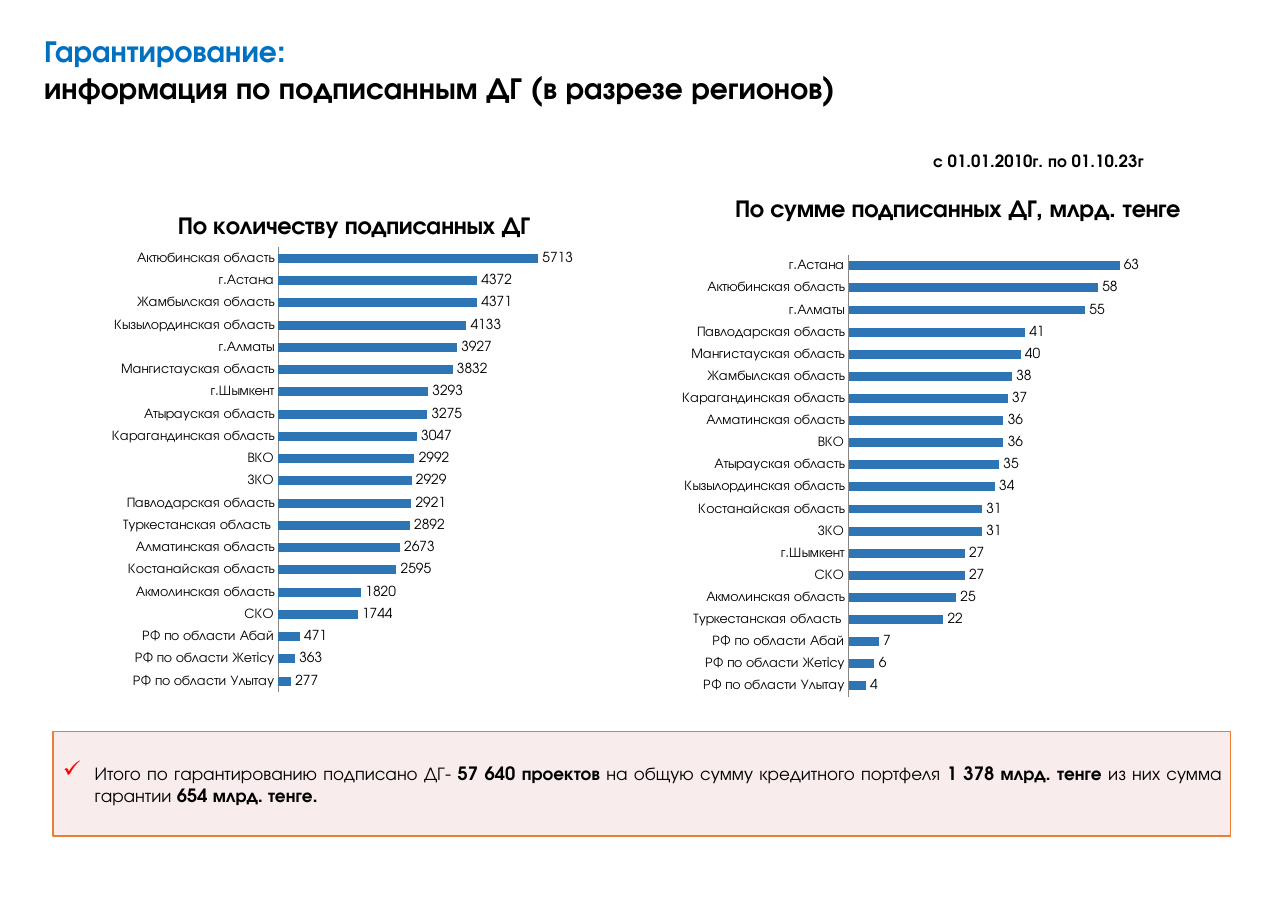
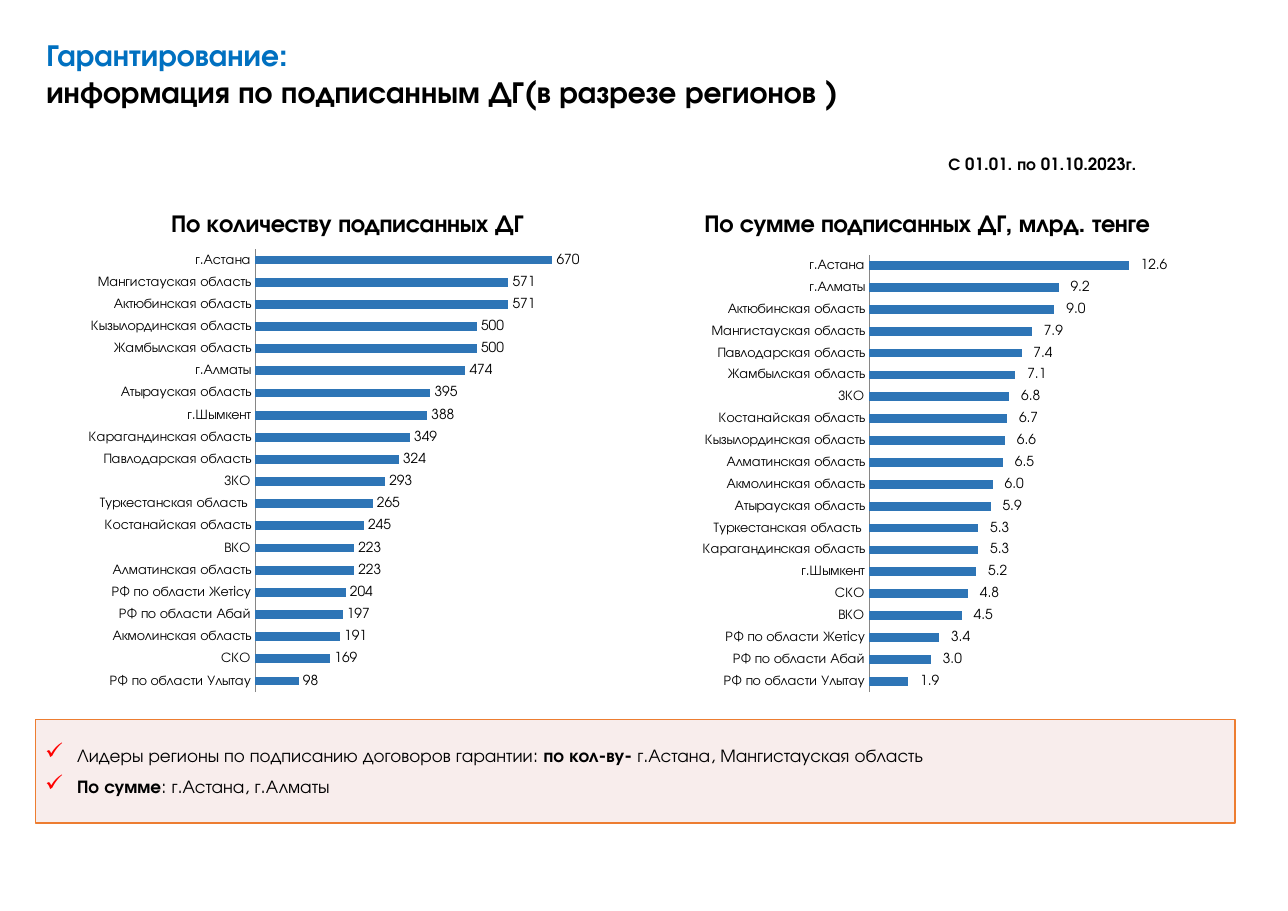
from lxml import etree
from pptx import Presentation
from pptx.chart.data import CategoryChartData
from pptx.dml.color import RGBColor
from pptx.enum.chart import XL_CHART_TYPE as CT, XL_LABEL_POSITION as LP, XL_TICK_MARK as TM
from pptx.enum.shapes import MSO_SHAPE
from pptx.enum.text import MSO_ANCHOR, MSO_AUTO_SIZE, PP_ALIGN
from pptx.oxml import parse_xml
from pptx.oxml.ns import nsdecls, qn
from pptx.util import Inches, Pt

FONT = "TeX Gyre Adventor"
BLACK, BLUE, BAR, GRAY = "000000", "0070C0", "2E75B6", "868686"
PINK, ORANGE, RED = "F2DCDB", "ED7D31", "FF0000"
COUNT_TITLE = "По количеству подписанных ДГ"
SUM_TITLE = "По сумме подписанных ДГ, млрд. тенге"
ONE_DECIMAL = r"_-* #\ ##0.0_р_._-;\-* #\ ##0.0_р_._-"

COUNT_TOTAL = {
    "РФ по области Улытау": 277, "РФ по области Жетiсу": 363, "РФ по области Абай": 471,
    "СКО": 1744, "Акмолинская область": 1820, "Костанайская область": 2595,
    "Алматинская область": 2673, "Туркестанская область ": 2892,
    "Павлодарская область": 2921, "ЗКО": 2929, "ВКО": 2992,
    "Карагандинская область": 3047, "Атырауская область": 3275, "г.Шымкент": 3293,
    "Мангистауская область": 3832, "г.Алматы": 3927, "Кызылординская область": 4133,
    "Жамбылская область": 4371, "г.Астана": 4372, "Актюбинская область": 5713,
}
SUM_TOTAL = {
    "РФ по области Улытау": 4, "РФ по области Жетiсу": 6, "РФ по области Абай": 7,
    "Туркестанская область ": 22, "Акмолинская область": 25, "СКО": 27,
    "г.Шымкент": 27, "ЗКО": 31, "Костанайская область": 31,
    "Кызылординская область": 34, "Атырауская область": 35, "ВКО": 36,
    "Алматинская область": 36, "Карагандинская область": 37, "Жамбылская область": 38,
    "Мангистауская область": 40, "Павлодарская область": 41, "г.Алматы": 55,
    "Актюбинская область": 58, "г.Астана": 63,
}
COUNT_2023 = {
    "РФ по области Улытау": 98, "СКО": 169, "Акмолинская область": 191,
    "РФ по области Абай": 197, "РФ по области Жетiсу": 204, "Алматинская область": 223,
    "ВКО": 223, "Костанайская область": 245, "Туркестанская область ": 265,
    "ЗКО": 293, "Павлодарская область": 324, "Карагандинская область": 349,
    "г.Шымкент": 388, "Атырауская область": 395, "г.Алматы": 474,
    "Жамбылская область": 500, "Кызылординская область": 500,
    "Актюбинская область": 571, "Мангистауская область": 571, "г.Астана": 670,
}
SUM_2023 = {
    "РФ по области Улытау": 1.9, "РФ по области Абай": 3, "РФ по области Жетiсу": 3.4,
    "ВКО": 4.5, "СКО": 4.8, "г.Шымкент": 5.2, "Карагандинская область": 5.3,
    "Туркестанская область ": 5.3, "Атырауская область": 5.9,
    "Акмолинская область": 6, "Алматинская область": 6.5,
    "Кызылординская область": 6.6, "Костанайская область": 6.7, "ЗКО": 6.8,
    "Жамбылская область": 7.1, "Павлодарская область": 7.4,
    "Мангистауская область": 7.9, "Актюбинская область": 9, "г.Алматы": 9.2,
    "г.Астана": 12.6,
}


def rgb(color):
    """Turn a hex string into a colour."""
    return RGBColor.from_string(color)


def style(font, size, color=BLACK, bold=False):
    """Apply the deck's typeface with a size, colour and weight."""
    font.name, font.size, font.bold = FONT, Pt(size), bold
    font.color.rgb = rgb(color)


def place(shape, box):
    """Move a shape to a box given in inches."""
    shape.left, shape.top, shape.width, shape.height = map(Inches, box)


def add_heading(s, box, subtitle):
    """Fill the title placeholder with the blue topic and black subtitle."""
    title = s.shapes.title
    place(title, box)
    tf = title.text_frame
    tf.text = f"Гарантирование:\v{subtitle}"
    tf.auto_size, tf.vertical_anchor = MSO_AUTO_SIZE.NONE, MSO_ANCHOR.TOP
    p = tf.paragraphs[0]
    p.alignment = PP_ALIGN.LEFT
    for r, color in zip(p.runs, (BLUE, BLACK)):
        style(r.font, 20, color, True)


def add_period(s, box, text):
    """Write the reporting period above the right chart."""
    tf = s.shapes.add_textbox(*map(Inches, box)).text_frame
    tf.text = text
    tf.word_wrap = False
    style(tf.paragraphs[0].runs[0].font, 11, bold=True)


def set_layout(parent, index, inner=False, **fractions):
    """Give a chart part a manual layout in fractions of the chart."""
    old = parent.find(qn("c:layout"))
    if old is not None:
        parent.remove(old)
    layout = parse_xml(f"<c:layout {nsdecls('c')}><c:manualLayout/></c:layout>")
    parts = [("layoutTarget", "inner")] if inner else []
    parts += [("xMode", "edge"), ("yMode", "edge"), *fractions.items()]
    for tag, value in parts:
        etree.SubElement(layout[0], qn(f"c:{tag}")).set("val", str(value))
    parent.insert(index, layout)


def add_bars(s, box, title, values, top, plot, title_at, fmt="General"):
    """Draw a ranked bar chart of the regions."""
    data = CategoryChartData()
    data.categories = list(values)
    data.add_series("Series 1", list(values.values()))
    chart = s.shapes.add_chart(CT.BAR_CLUSTERED, *map(Inches, box), data).chart
    style(chart.font, 9)
    chart.has_legend = False
    chart.has_title = True
    tf = chart.chart_title.text_frame
    tf.text = title
    style(tf.paragraphs[0].runs[0].font, 16, bold=True)
    set_layout(chart.chart_title.element, 1, **dict(zip("xy", title_at)))
    set_layout(chart.element.find(".//" + qn("c:plotArea")), 0, True,
               **dict(zip("xywh", plot)))

    cat, val = chart.category_axis, chart.value_axis
    cat.major_tick_mark = cat.minor_tick_mark = TM.NONE
    cat.format.line.color.rgb = rgb(GRAY)
    cat.format.line.width = Pt(0.75)
    val.visible = val.has_major_gridlines = False
    val.minimum_scale, val.maximum_scale = 0, top

    bars = chart.plots[0]
    bars.gap_width, bars.vary_by_categories = 150, False
    fill = bars.series[0].format.fill
    fill.solid()
    fill.fore_color.rgb = rgb(BAR)
    bars.has_data_labels = True
    labels = bars.data_labels
    labels.show_value, labels.position = True, LP.OUTSIDE_END
    labels.number_format, labels.number_format_is_linked = fmt, False
    style(labels.font, 9)


def add_check(p):
    """Give a paragraph a red check mark as its bullet."""
    pPr = p._p.get_or_add_pPr()
    pPr.set("marL", str(Inches(0.3)))
    pPr.set("indent", str(Inches(-0.29)))
    color = etree.SubElement(pPr, qn("a:buClr"))
    etree.SubElement(color, qn("a:srgbClr")).set("val", RED)
    etree.SubElement(pPr, qn("a:buSzPct")).set("val", "125000")
    etree.SubElement(pPr, qn("a:buChar")).set("char", "✓")


def add_summary(s, box, items):
    """Draw the framed conclusions; items are lists of (text, bold)."""
    sp = s.shapes.add_shape(MSO_SHAPE.RECTANGLE, *map(Inches, box))
    sp.shadow.inherit = False
    sp.fill.solid()
    sp.fill.fore_color.rgb = rgb(PINK)
    tint = sp.element.find(".//" + qn("a:srgbClr"))
    etree.SubElement(tint, qn("a:alpha")).set("val", "50000")
    sp.line.color.rgb, sp.line.width = rgb(ORANGE), Pt(1)
    tf = sp.text_frame
    tf.word_wrap, tf.vertical_anchor = True, MSO_ANCHOR.MIDDLE
    tf.margin_left = tf.margin_right = Inches(0.08)
    tf.margin_top = tf.margin_bottom = Inches(0.04)
    for i, item in enumerate(items):
        p = tf.add_paragraph() if i else tf.paragraphs[0]
        add_check(p)
        p.alignment, p.space_after = PP_ALIGN.JUSTIFY, Pt(6)
        for text, bold in item:
            r = p.add_run()
            r.text = text
            style(r.font, 12, bold=bold)


def add_total_slide(prs):
    """Build the slide on guarantees signed since 2010."""
    s = prs.slides.add_slide(prs.slide_layouts[5])
    add_heading(s, (0.3, 0.24, 8.39, 0.77),
                "информация по подписанным ДГ (в разрезе регионов)")
    add_period(s, (8.37, 1.32, 2.17, 0.29), "с 01.01.2010г. по 01.10.23г")
    add_summary(s, (0.48, 6.64, 10.69, 0.95), [[
        ("Итого по гарантированию подписано ДГ- ", False),
        ("57 640 проектов ", True),
        ("на общую сумму кредитного портфеля ", False),
        ("1 378 млрд. тенге ", True),
        ("из них сумма гарантии", False),
        (" 654 млрд. тенге.", True)]])
    add_bars(s, (0.59, 1.73, 5.18, 4.82), COUNT_TITLE, COUNT_TOTAL, 6000,
             (0.374, 0.107, 0.478, 0.838), (0.19, 0.035))
    add_bars(s, (5.58, 1.73, 5.53, 4.82), SUM_TITLE, SUM_TOTAL, 70,
             (0.384, 0.121, 0.494, 0.833), (0.19, 0.003), "#,##0")


def add_year_slide(prs):
    """Build the slide on guarantees signed in 2023."""
    s = prs.slides.add_slide(prs.slide_layouts[5])
    add_heading(s, (0.32, 0.28, 8.3, 0.77),
                "информация по подписанным ДГ(в разрезе регионов )")
    add_period(s, (8.51, 1.35, 1.96, 0.29), "С 01.01. по 01.10.2023г.")
    add_summary(s, (0.32, 6.53, 10.89, 0.94), [
        [("Лидеры регионы по подписанию договоров гарантии: ", False),
         ("по кол-ву- ", True),
         ("г.Астана, Мангистауская область", False)],
        [("По сумме", True), (": г.Астана, г.Алматы", False)]])
    add_bars(s, (0.43, 1.71, 5.42, 4.75), COUNT_TITLE, COUNT_2023, 800,
             (0.348, 0.116, 0.594, 0.847), (0.2, 0.036))
    add_bars(s, (5.39, 1.71, 6.02, 4.74), SUM_TITLE, SUM_2023, 14,
             (0.415, 0.127, 0.435, 0.838), (0.16, 0.036), ONE_DECIMAL)


def main():
    """Build and save the deck."""
    prs = Presentation()
    prs.slide_width, prs.slide_height = Inches(11.69), Inches(8.27)
    add_total_slide(prs)
    add_year_slide(prs)
    prs.save("out.pptx")


if __name__ == "__main__":
    main()
